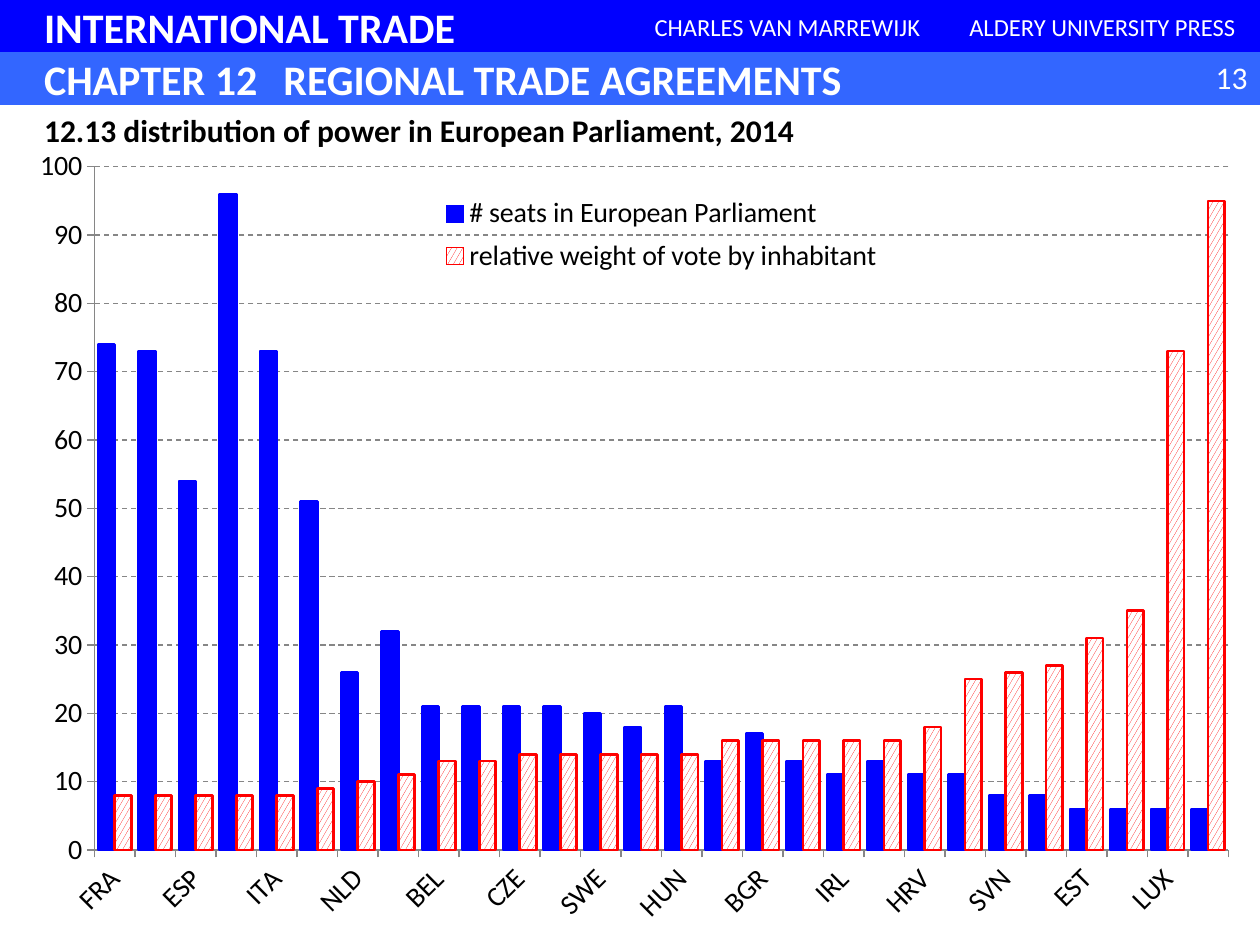
from lxml import etree
from pptx import Presentation
from pptx import util as u
from pptx.chart.data import CategoryChartData
from pptx.dml.color import RGBColor
from pptx.enum import chart as ch, dml, shapes, text
from pptx.oxml.ns import qn

BLUE = RGBColor(0x00, 0x00, 0xFF)
LIGHT_BLUE = RGBColor(0x33, 0x66, 0xFF)
RED = RGBColor(0xFF, 0x00, 0x00)
GREY = RGBColor(0x86, 0x86, 0x86)
WHITE = RGBColor(0xFF, 0xFF, 0xFF)
BLACK = RGBColor(0x00, 0x00, 0x00)

COUNTRIES = ("FRA GBR ESP DEU ITA POL NLD ROM BEL GRC CZE PRT SWE AUT "
             "HUN DNK BGR FIN IRL SVK HRV LTU SVN LVA EST CYP LUX MLT").split()
SEATS = [74, 73, 54, 96, 73, 51, 26, 32, 21, 21, 21, 21, 20, 18,
         21, 13, 17, 13, 11, 13, 11, 11, 8, 8, 6, 6, 6, 6]
VOTE_WEIGHT = [8, 8, 8, 8, 8, 9, 10, 11, 13, 13, 14, 14, 14, 14,
               14, 16, 16, 16, 16, 16, 18, 25, 26, 27, 31, 35, 73, 95]


def write(frame, words, size=14, bold=False, color=WHITE, font="Calibri",
          align=text.PP_ALIGN.LEFT, anchor=text.MSO_ANCHOR.MIDDLE,
          indent=0.1, tab=None):
    """Fill a text frame; indent is its left inset and tab a tab stop, in inches."""
    frame.word_wrap = True
    frame.auto_size = text.MSO_AUTO_SIZE.NONE
    frame.vertical_anchor = anchor
    frame.margin_left = u.Inches(indent)
    paragraph = frame.paragraphs[0]
    paragraph.alignment = align
    if tab:
        stops = etree.SubElement(paragraph._p.get_or_add_pPr(), qn("a:tabLst"))
        etree.SubElement(stops, qn("a:tab"), pos=str(u.Inches(tab)), algn="l")
    run = paragraph.add_run()
    run.text = words
    run.font.name, run.font.size = font, u.Pt(size)
    run.font.bold, run.font.color.rgb = bold, color


def place(parent, index, x, y, w, h, inner=False):
    """Give a chart part a manual layout in fractions of the chart."""
    for old in parent.findall(qn("c:layout")):
        parent.remove(old)
    layout = etree.Element(qn("c:layout"))
    manual = etree.SubElement(layout, qn("c:manualLayout"))
    settings = [("layoutTarget", "inner")] if inner else []
    settings += [("xMode", "edge"), ("yMode", "edge"),
                 ("x", x), ("y", y), ("w", w), ("h", h)]
    for tag, value in settings:
        etree.SubElement(manual, qn(f"c:{tag}"), val=str(value))
    parent.insert(index, layout)


class Deck:
    font = "Calibri"

    def __init__(self):
        self.prs = Presentation()
        self.prs.slide_width, self.prs.slide_height = u.Inches(10), u.Inches(7.5)
        self.slide = self.prs.slides.add_slide(self.prs.slide_layouts[5])

    def band(self, box, fill, words, **style):
        bar = self.slide.shapes.add_shape(
            shapes.MSO_SHAPE.RECTANGLE, *map(u.Inches, box))
        bar.shadow.inherit = False
        bar.fill.solid()
        bar.fill.fore_color.rgb = fill
        bar.line.color.rgb = fill
        bar.line.width = u.Pt(0.75)
        write(bar.text_frame, words, font=self.font, **style)

    def label(self, box, words, **style):
        area = self.slide.shapes.add_textbox(*map(u.Inches, box))
        write(area.text_frame, words, font=self.font, **style)

    def title(self, box, words, **style):
        heading = self.slide.shapes.title
        heading.left, heading.top, heading.width, heading.height = map(u.Inches, box)
        write(heading.text_frame, words, font=self.font, **style)

    def column_chart(self, box, categories, series):
        data = CategoryChartData(number_format="General")
        data.categories = categories
        for name, values in series.items():
            data.add_series(name, values)
        chart = self.slide.shapes.add_chart(
            ch.XL_CHART_TYPE.COLUMN_CLUSTERED, *map(u.Inches, box), data).chart
        chart.has_title = False
        chart.font.name, chart.font.size = self.font, u.Pt(16)
        chart.font.color.rgb = BLACK
        plot = chart.plots[0]
        plot.gap_width, plot.overlap = 45, 0
        plot.vary_by_categories = False
        self.axes(chart)
        chart.has_legend = True
        chart.legend.position = ch.XL_LEGEND_POSITION.RIGHT
        chart.legend.include_in_layout = False
        chart.legend.font.name, chart.legend.font.size = self.font, u.Pt(16)
        return chart

    def axes(self, chart):
        for axis in (chart.category_axis, chart.value_axis):
            axis.major_tick_mark = ch.XL_TICK_MARK.OUTSIDE
            axis.minor_tick_mark = ch.XL_TICK_MARK.NONE
            axis.format.line.color.rgb = GREY
            axis.tick_labels.font.name = self.font
            axis.tick_labels.font.size = u.Pt(16)
        slant = chart.category_axis._element.find(qn("c:txPr")).find(qn("a:bodyPr"))
        slant.set("rot", str(-45 * 60000))
        slant.set("vert", "horz")
        scale = chart.value_axis
        scale.minimum_scale, scale.maximum_scale, scale.major_unit = 0, 100, 10
        scale.has_major_gridlines = True
        grid = scale.major_gridlines.format.line
        grid.color.rgb, grid.width = GREY, u.Pt(0.75)
        grid.dash_style = dml.MSO_LINE.DASH


def main():
    deck = Deck()
    deck.band((0, 0, 10, 0.42), BLUE, "INTERNATIONAL TRADE",
              size=24, bold=True, indent=0.35)
    for left, credit in ((5, "CHARLES VAN MARREWIJK"), (7.5, "ALDERY UNIVERSITY PRESS")):
        deck.band((left, 0, 2.5, 0.42), BLUE, credit, align=text.PP_ALIGN.CENTER)
    deck.band((0, 0.42, 10, 0.41), LIGHT_BLUE,
              "CHAPTER 12\tREGIONAL TRADE AGREEMENTS",
              size=24, bold=True, indent=0.35, tab=1.9)
    deck.label((9.33, 0.41, 0.67, 0.4), "13", size=18, align=text.PP_ALIGN.RIGHT,
               anchor=text.MSO_ANCHOR.TOP)
    deck.title((0.25, 0.83, 7.25, 0.4),
               "12.13 distribution of power in European Parliament, 2014",
               size=18, bold=True, color=BLACK, anchor=text.MSO_ANCHOR.TOP)

    chart = deck.column_chart((0, 0.83, 10, 6.67), COUNTRIES, {
        "# seats in European Parliament": SEATS,
        "relative weight of vote by inhabitant": VOTE_WEIGHT})
    seats, weight = chart.plots[0].series
    for columns, color in ((seats, BLUE), (weight, RED)):
        columns.invert_if_negative = False
        columns.format.line.color.rgb = color
        columns.format.line.width = u.Pt(1.5)
    seats.format.fill.solid()
    seats.format.fill.fore_color.rgb = BLUE
    hatch = weight.format.fill
    hatch.patterned()
    hatch.pattern = dml.MSO_PATTERN.LARGE_CONFETTI
    hatch.fore_color.rgb, hatch.back_color.rgb = RED, WHITE

    plot_area = chart.plots[0]._element.getparent()
    place(plot_area, 0, 0.075, 0.074, 0.9, 0.813, inner=True)
    place(chart.legend._element, 1, 0.35, 0.1, 0.35, 0.11)
    deck.prs.save("out.pptx")


if __name__ == "__main__":
    main()
